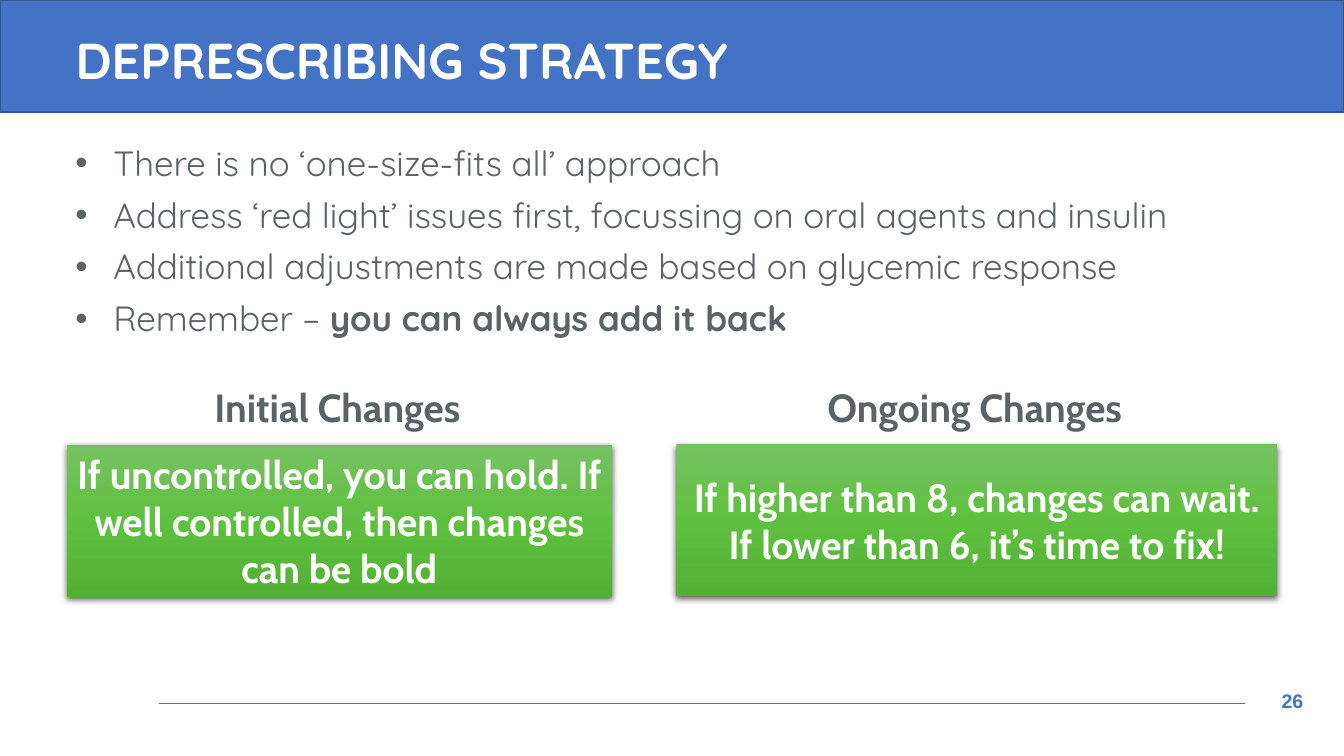
import pptx
import pptx.util
import pptx.dml.color
import pptx.enum.shapes
import pptx.enum.text
import pptx.oxml
import pptx.oxml.ns
from dataclasses import dataclass
from lxml import etree

Pt = pptx.util.Pt
RGB = pptx.dml.color.RGBColor.from_string
ALIGN = pptx.enum.text.PP_ALIGN
ANCHOR = pptx.enum.text.MSO_ANCHOR
FIT = pptx.enum.text.MSO_AUTO_SIZE
RECT = pptx.enum.shapes.MSO_SHAPE.RECTANGLE
qn = pptx.oxml.ns.qn
NS = pptx.oxml.ns.nsdecls("a")


@dataclass(frozen=True)
class Theme:
    blue: str = "4472C4"
    band_edge: str = "325491"
    white: str = "FFFFFF"
    grey: str = "5C6367"
    greens: tuple = ((0, "76C262"), (50, "5FC03F"), (100, "52B033"))
    heading_font: str = "Quicksand"
    card_font: str = "Cabin"
    number_font: str = "Arial"
    title_size: int = 36
    bullet_size: int = 25
    card_size: int = 28
    number_size: int = 14


THEME = Theme()

STRATEGY = [
    [("There is no ‘one-size-fits all’ approach", False)],
    [("Address ‘red light’ issues first, focussing on oral agents and insulin", False)],
    [("Additional adjustments are made based on glycemic response", False)],
    [("Remember – ", False), ("you can always add it back", True)],
]

# Heading, heading width, advice, card box
CHANGES = [
    ("Initial Changes", 192.2,
     "If uncontrolled, you can hold. If well controlled, then changes can be bold",
     (47.5, 317.5, 389.5, 108.7)),
    ("Ongoing Changes", 227.5,
     "If higher than 8, changes can wait. If lower than 6, it’s time to fix!",
     (483.1, 317.5, 429.1, 108)),
]


def apply(target, values):
    for name, value in values.items():
        setattr(target, name, value)


def style_font(font, name, size, color, bold=False):
    apply(font, {"name": name, "size": Pt(size), "bold": bold})
    font.color.rgb = RGB(color)


def points(*box):
    return [Pt(length) for length in box]


def add_band(slide, left, top, width, height):
    band = slide.shapes.add_shape(RECT, *points(left, top, width, height))
    band.shadow.inherit = False
    band.fill.solid()
    band.fill.fore_color.rgb = RGB(THEME.blue)
    band.line.color.rgb = RGB(THEME.band_edge)
    band.line.width = Pt(1)
    # The band lies behind the title
    slide.shapes._spTree.insert(2, band._element)


def add_title(slide, text, left, top, width, height):
    title = slide.shapes.title
    apply(title, dict(zip(("left", "top", "width", "height"),
                          points(left, top, width, height))))
    apply(title.text_frame, {"text": text, "word_wrap": True, "auto_size": FIT.NONE,
                             "vertical_anchor": ANCHOR.MIDDLE})
    heading = title.text_frame.paragraphs[0]
    apply(heading, {"alignment": ALIGN.LEFT, "line_spacing": 0.9})
    style_font(heading.runs[0].font, THEME.heading_font, THEME.title_size,
               THEME.white, True)


def add_strategy(slide, items, left, top, width, height):
    frame = slide.shapes.add_textbox(*points(left, top, width, height)).text_frame
    frame.word_wrap = True
    for index, parts in enumerate(items):
        item = frame.add_paragraph() if index else frame.paragraphs[0]
        properties = item._p.get_or_add_pPr()
        properties.set("marL", str(Pt(27)))
        properties.set("indent", str(-Pt(27)))
        properties.append(pptx.oxml.parse_xml(f'<a:buFont {NS} typeface="Arial"/>'))
        properties.append(pptx.oxml.parse_xml(f'<a:buChar {NS} char="•"/>'))
        apply(item, {"line_spacing": 0.9, "space_before": Pt(10 if index else 0)})
        for text, bold in parts:
            run = item.add_run()
            run.text = text
            style_font(run.font, THEME.heading_font, THEME.bullet_size, THEME.grey, bold)


def paint_card(card):
    card.fill.background()
    card.line.fill.background()
    card.shadow.inherit = False
    shape_properties = card._element.spPr
    stops = "".join(f'<a:gs pos="{at * 1000}"><a:srgbClr val="{color}"/></a:gs>'
                    for at, color in THEME.greens)
    gradient = pptx.oxml.parse_xml(
        f'<a:gradFill {NS} rotWithShape="1"><a:gsLst>{stops}</a:gsLst>'
        '<a:lin ang="5400000" scaled="0"/></a:gradFill>')
    shape_properties.replace(shape_properties.find(qn("a:noFill")), gradient)
    shape_properties.find(qn("a:effectLst")).append(pptx.oxml.parse_xml(
        f'<a:outerShdw {NS} blurRad="{Pt(4.5)}" dist="{Pt(1.5)}" dir="5400000" '
        'algn="ctr" rotWithShape="0"><a:srgbClr val="000000">'
        '<a:alpha val="63000"/></a:srgbClr></a:outerShdw>'))


def add_change(slide, heading, heading_width, advice, left, top, width, height):
    # Green card
    card = slide.shapes.add_shape(RECT, *points(left, top, width, height))
    paint_card(card)
    apply(card.text_frame, {"text": advice, "word_wrap": True,
                            "vertical_anchor": ANCHOR.MIDDLE})
    message = card.text_frame.paragraphs[0]
    message.alignment = ALIGN.CENTER
    style_font(message.runs[0].font, THEME.card_font, THEME.card_size, THEME.white, True)

    # Heading centred above the card
    label = slide.shapes.add_textbox(*points(
        left + (width - heading_width) / 2, top - 47.5, heading_width, 41))
    apply(label.text_frame, {"text": heading, "word_wrap": False,
                             "auto_size": FIT.SHAPE_TO_FIT_TEXT})
    style_font(label.text_frame.paragraphs[0].runs[0].font, THEME.card_font,
               THEME.card_size, THEME.grey, True)


def add_footer(slide, number, left, top, width, height):
    middle = top + height / 2 + 1.8
    rule = slide.shapes.add_connector(
        pptx.enum.shapes.MSO_CONNECTOR.STRAIGHT,
        *points(left, middle, left + width - 49, middle))
    rule.line.color.rgb = RGB(THEME.blue)
    rule.line.width = Pt(0.75)
    etree.SubElement(rule._element.spPr, qn("a:effectLst"))

    page = slide.shapes.add_textbox(*points(left + width - 46, top, 46, height))
    apply(page.text_frame, {"text": number, "word_wrap": True,
                            "vertical_anchor": ANCHOR.MIDDLE})
    digits = page.text_frame.paragraphs[0]
    digits.alignment = ALIGN.RIGHT
    style_font(digits.runs[0].font, THEME.number_font, THEME.number_size,
               THEME.blue, True)


def main():
    deck = pptx.Presentation()
    apply(deck, {"slide_width": Pt(960), "slide_height": Pt(540)})
    slide = deck.slides.add_slide(deck.slide_layouts[5])
    add_band(slide, 0, 0, 960, 80)
    add_title(slide, "DEPRESCRIBING STRATEGY", 46.8, 10.8, 872.6, 69.1)
    add_strategy(slide, STRATEGY, 46.8, 100.8, 872.6, 376.6)
    for heading, heading_width, advice, box in CHANGES:
        add_change(slide, heading, heading_width, advice, *box)
    add_footer(slide, "26", 113.8, 491, 824.3, 19.5)
    deck.save("out.pptx")


if __name__ == "__main__":
    main()
